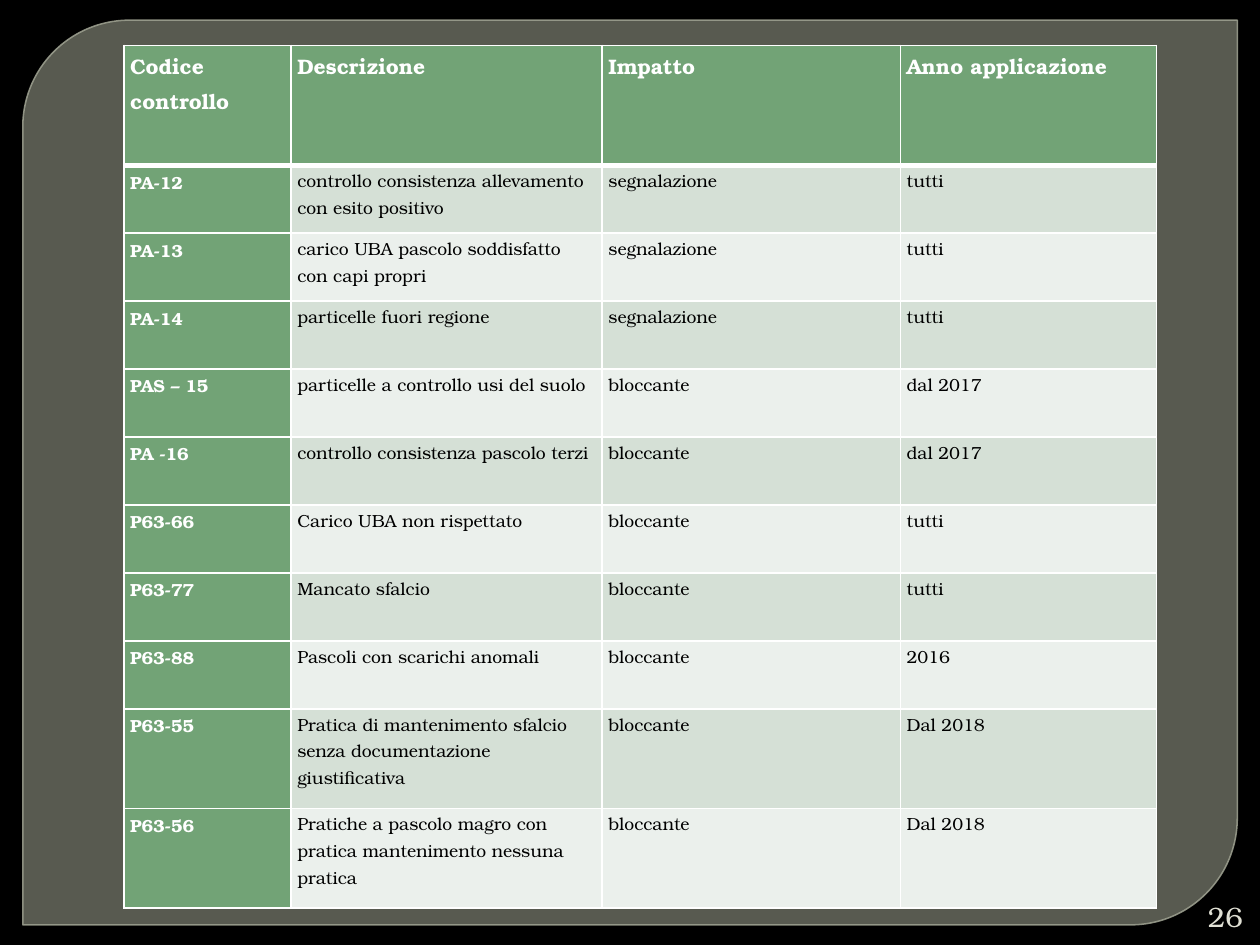
from lxml import etree
from pptx import Presentation
from pptx.dml.color import RGBColor
from pptx.enum import shapes, text
from pptx.oxml.ns import qn
from pptx.util import Pt

BLACK = RGBColor(0x00, 0x00, 0x00)
WHITE = RGBColor(0xFF, 0xFF, 0xFF)
PANEL = RGBColor(0x88, 0x8B, 0x7B)
PANEL_EDGE = RGBColor(0x9D, 0xA0, 0x90)
NUMBER = RGBColor(0xE0, 0xE0, 0xD4)
GREEN = RGBColor(0x72, 0xA3, 0x76)
BANDS = (RGBColor(0xEB, 0xF0, 0xEC), RGBColor(0xD5, 0xE0, 0xD6))
FONT = "TeX Gyre Bonum"

COLUMN_WIDTHS = (95.5, 177.8, 170.4, 146.3)
ROW_HEIGHTS = (68.4,) + (38.85,) * 8 + (56.9,) * 2
CHECKS = (
    ("Codice controllo", "Descrizione", "Impatto", "Anno applicazione"),
    ("PA-12", "controllo consistenza allevamento con esito positivo", "segnalazione", "tutti"),
    ("PA-13", "carico UBA pascolo soddisfatto con capi propri", "segnalazione", "tutti"),
    ("PA-14", "particelle fuori regione", "segnalazione", "tutti"),
    ("PAS – 15", "particelle a controllo usi del suolo", "bloccante", "dal 2017"),
    ("PA -16", "controllo consistenza pascolo terzi", "bloccante", "dal 2017"),
    ("P63-66", "Carico UBA non rispettato", "bloccante", "tutti"),
    ("P63-77", "Mancato sfalcio", "bloccante", "tutti"),
    ("P63-88", "Pascoli con scarichi anomali", "bloccante", "2016"),
    ("P63-55", "Pratica di mantenimento sfalcio senza documentazione giustificativa",
     "bloccante", "Dal 2018"),
    ("P63-56", "Pratiche a pascolo magro con pratica mantenimento nessuna pratica",
     "bloccante", "Dal 2018"),
)


def format_font(font, size, color, bold=False):
    font.name, font.size, font.bold = FONT, Pt(size), bold
    font.color.rgb = color


def set_opacity(fill_parent, percent):
    color = fill_parent.find(qn("a:solidFill"))[0]
    etree.SubElement(color, qn("a:alpha"), val=str(percent * 1000))


def add_panel(page, left, top, width, height):
    panel = page.shapes.add_shape(shapes.MSO_SHAPE.ROUND_2_DIAG_RECTANGLE,
                                  Pt(left), Pt(top), Pt(width), Pt(height))
    panel.shadow.inherit = False
    panel.adjustments[0], panel.adjustments[1] = 0.118, 0
    panel.fill.solid()
    panel.fill.fore_color.rgb = PANEL
    panel.line.color.rgb = PANEL_EDGE
    panel.line.width = Pt(0.87)
    properties = panel._element.spPr
    set_opacity(properties, 65)
    set_opacity(properties.find(qn("a:ln")), 88)


def add_page_number(page, left, top, width, height, number):
    box = page.shapes.add_textbox(Pt(left), Pt(top), Pt(width), Pt(height))
    frame = box.text_frame
    frame.word_wrap = True
    frame.vertical_anchor = text.MSO_ANCHOR.MIDDLE
    frame.text = str(number)
    para = frame.paragraphs[0]
    para.alignment = text.PP_ALIGN.RIGHT
    format_font(para.runs[0].font, 16, NUMBER)


def set_borders(cell, bottom_width):
    """Draw white edges; the edge elements must come before the cell fill."""
    properties = cell._tc.get_or_add_tcPr()
    edges = (("L", 1), ("R", 1), ("T", 1), ("B", bottom_width))
    for position, (side, width) in enumerate(edges):
        edge = etree.Element(qn(f"a:ln{side}"), w=str(Pt(width)))
        fill = etree.SubElement(edge, qn("a:solidFill"))
        etree.SubElement(fill, qn("a:srgbClr"), val=str(WHITE))
        properties.insert(position, edge)


def fill_cell(cell, words, row, column):
    is_header = row == 0
    is_heading = is_header or column == 0
    cell.margin_left = cell.margin_right = Pt(3.6)
    cell.margin_top = cell.margin_bottom = 0
    cell.fill.solid()
    cell.fill.fore_color.rgb = GREEN if is_heading else BANDS[row % 2]
    set_borders(cell, 3 if is_header or row == 0 else 1)
    if row == 1:
        cell._tc.tcPr.find(qn("a:lnT")).set("w", str(Pt(3)))
    cell.text_frame.text = words
    para = cell.text_frame.paragraphs[0]
    para.line_spacing = 1.15
    format_font(para.runs[0].font, 12 if is_header else 10,
                WHITE if is_heading else BLACK, is_heading)


def add_check_table(page, left, top):
    frame = page.shapes.add_table(len(CHECKS), len(COLUMN_WIDTHS), Pt(left), Pt(top),
                                  Pt(sum(COLUMN_WIDTHS)), Pt(sum(ROW_HEIGHTS)))
    table = frame.table
    for column, width in zip(table.columns, COLUMN_WIDTHS):
        column.width = Pt(width)
    for row, height in zip(table.rows, ROW_HEIGHTS):
        row.height = Pt(height)
    for row, entries in enumerate(CHECKS):
        for column, words in enumerate(entries):
            fill_cell(table.cell(row, column), words, row, column)


def main():
    deck = Presentation()
    deck.slide_width, deck.slide_height = Pt(720), Pt(540)
    page = deck.slides.add_slide(deck.slide_layouts[6])
    page.background.fill.solid()
    page.background.fill.fore_color.rgb = BLACK
    add_panel(page, 13, 11.5, 694, 517)
    add_page_number(page, 680.4, 512.6, 36.7, 21.6, 26)
    add_check_table(page, 70.8, 26)
    deck.save("out.pptx")


if __name__ == "__main__":
    main()
